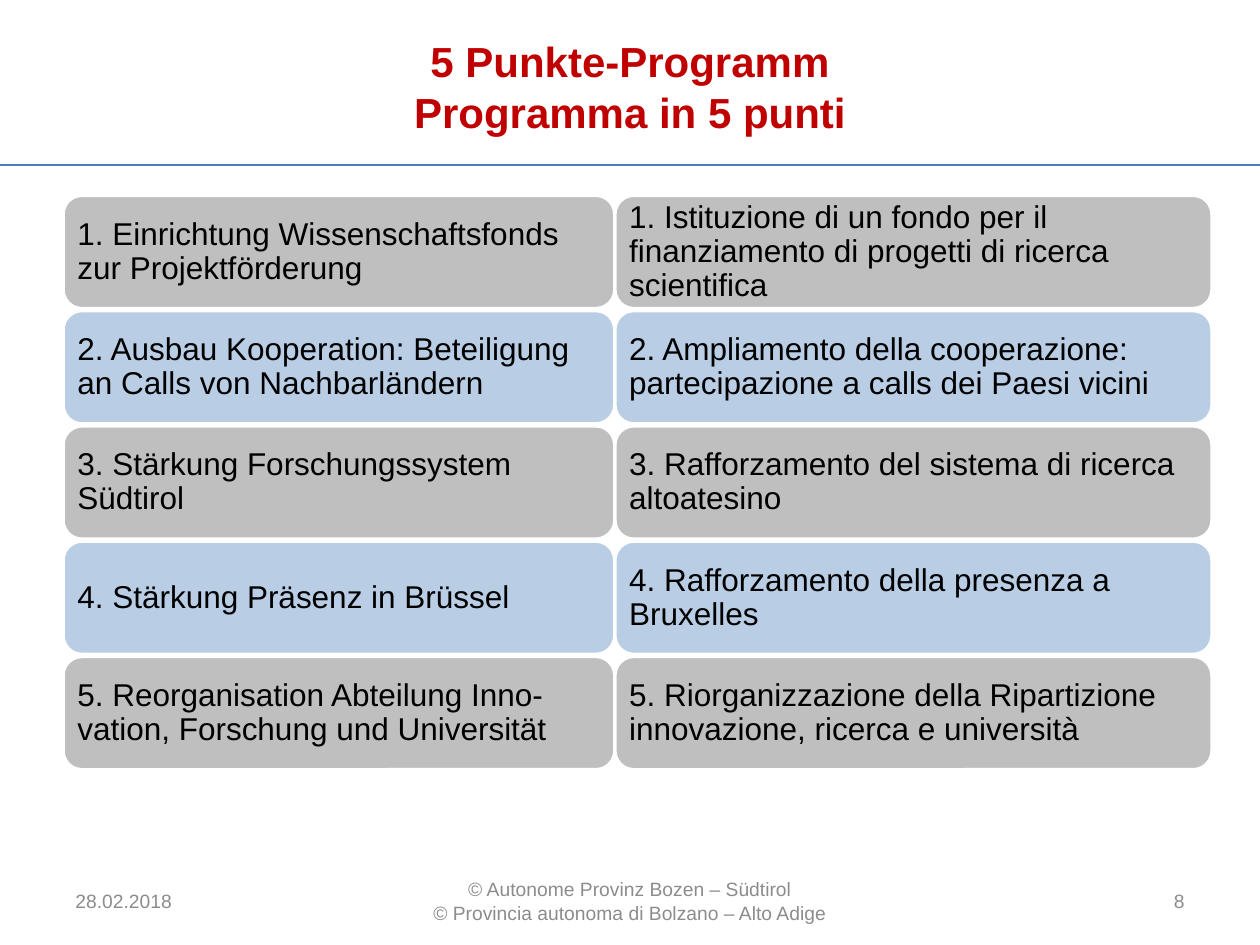
"""Build the bilingual five-point programme slide."""
from lxml import etree
from pptx import Presentation
from pptx import util as u
from pptx.dml.color import RGBColor
from pptx.enum import shapes, text
from pptx.oxml import ns

RED = RGBColor(0xC0, 0x00, 0x00)
BLACK = RGBColor(0x00, 0x00, 0x00)
WHITE = RGBColor(0xFF, 0xFF, 0xFF)
GREY = RGBColor(0xBF, 0xBF, 0xBF)
BLUE = RGBColor(0xB9, 0xCD, 0xE5)
RULE = RGBColor(0x4B, 0x7E, 0xBC)
FOOT = RGBColor(0x8C, 0x8C, 0x8C)
LEFT, MID, RIGHT = text.PP_ALIGN.LEFT, text.PP_ALIGN.CENTER, text.PP_ALIGN.RIGHT


def write(shape, words, size, color, align=LEFT, bold=False, pad=None, lead=None):
    """Fill a shape with formatted text."""
    frame = shape.text_frame
    frame.text = words
    frame.word_wrap = True
    frame.auto_size = text.MSO_AUTO_SIZE.NONE
    frame.vertical_anchor = text.MSO_ANCHOR.MIDDLE
    if pad is not None:
        frame.margin_left = frame.margin_right = u.Inches(pad)
        frame.margin_top = frame.margin_bottom = u.Inches(pad)
    for para in frame.paragraphs:
        para.alignment = align
        if lead:
            para.line_spacing = lead
        for run in para.runs:
            run.font.name = "Arial"
            run.font.size = u.Pt(size)
            run.font.bold = bold
            run.font.color.rgb = color


deck = Presentation()
deck.slide_width, deck.slide_height = u.Inches(10), u.Inches(7.5)
slide = deck.slides.add_slide(deck.slide_layouts[5])

rule = slide.shapes.add_connector(
    shapes.MSO_CONNECTOR.STRAIGHT, 0, u.Inches(1.31), deck.slide_width, u.Inches(1.31))
rule.line.color.rgb = RULE
rule.line.width = u.Pt(1)
etree.SubElement(rule.element.spPr, ns.qn("a:effectLst"))

title = slide.shapes.title
title.left, title.top = u.Inches(0.5), u.Inches(0.06)
title.width, title.height = u.Inches(9), u.Inches(1.25)
write(title, "5 Punkte-Programm\vProgramma in 5 punti", 24, RED, MID, bold=True)

feet = [
    (0.5, 2.33, LEFT, "28.02.2018"),
    (3.27, 3.46, MID,
     "© Autonome Provinz Bozen – Südtirol\n© Provincia autonoma di Bolzano – Alto Adige"),
    (7.17, 2.33, RIGHT, "8"),
]
for left, width, align, words in feet:
    box = slide.shapes.add_textbox(
        u.Inches(left), u.Inches(6.95), u.Inches(width), u.Inches(0.4))
    write(box, words, 11, FOOT, align)

TOP, STEP, HIGH = 1.55, 0.915, 0.9
columns = [
    (0.5, 4.38, [
        "1. Einrichtung Wissenschaftsfonds zur Projektförderung",
        "2. Ausbau Kooperation: Beteiligung an Calls von Nachbarländern",
        "3. Stärkung Forschungssystem Südtirol",
        "4. Stärkung Präsenz in Brüssel",
        "5. Reorganisation Abteilung Inno-vation, Forschung und Universität",
    ]),
    (4.88, 4.74, [
        "1. Istituzione di un fondo per il finanziamento di progetti di ricerca scientifica",
        "2. Ampliamento della cooperazione: partecipazione a calls dei Paesi vicini",
        "3. Rafforzamento del sistema di ricerca altoatesino",
        "4. Rafforzamento della presenza a Bruxelles",
        "5. Riorganizzazione della Ripartizione innovazione, ricerca e università",
    ]),
]
for left, width, points in columns:
    for row, words in enumerate(points):
        card = slide.shapes.add_shape(
            shapes.MSO_SHAPE.ROUNDED_RECTANGLE, u.Inches(left),
            u.Inches(TOP + row * STEP), u.Inches(width), u.Inches(HIGH))
        card.shadow.inherit = False
        card.fill.solid()
        card.fill.fore_color.rgb = BLUE if row % 2 else GREY
        card.line.color.rgb = WHITE
        card.line.width = u.Pt(2)
        write(card, words, 18, BLACK, pad=0.07, lead=0.9)

deck.save("out.pptx")
